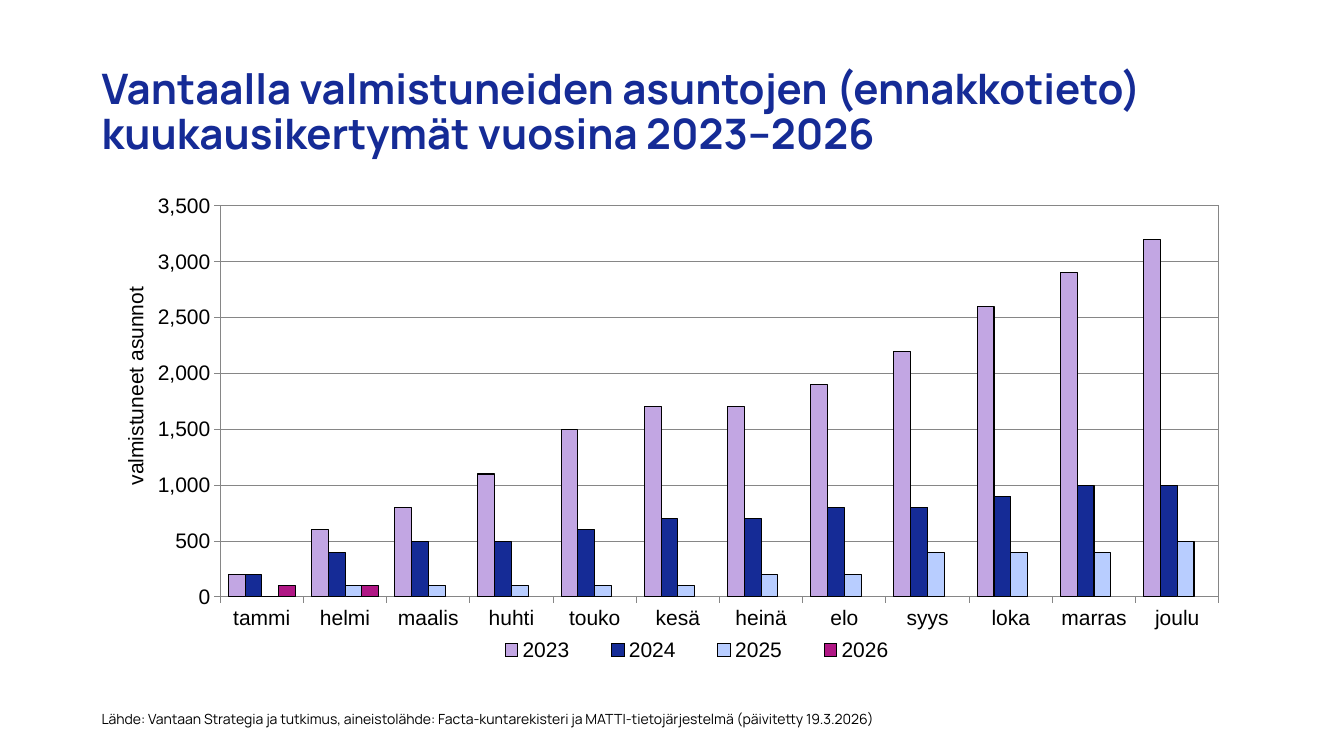
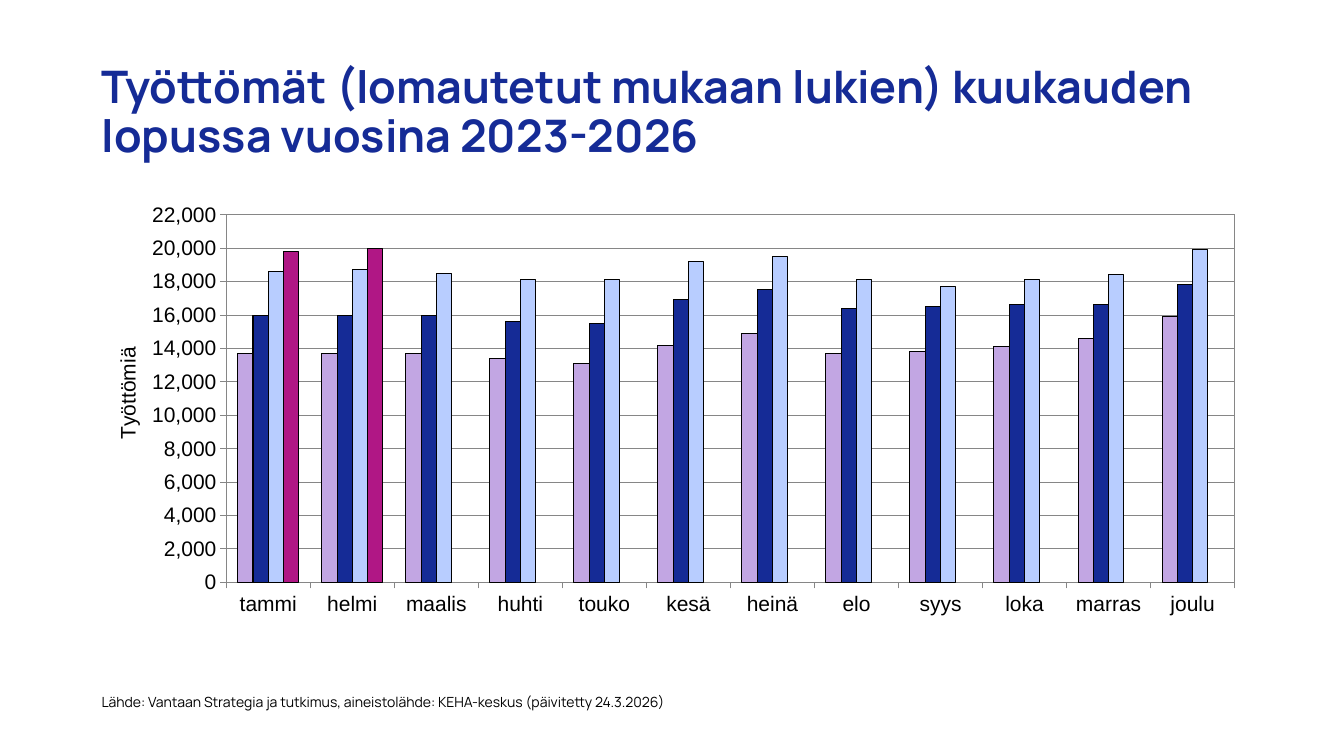
from pptx import Presentation
from pptx.chart.data import CategoryChartData
from pptx.dml.color import RGBColor
from pptx.enum.chart import XL_CHART_TYPE, XL_LEGEND_POSITION, XL_TICK_MARK
from pptx.enum.text import MSO_ANCHOR, MSO_AUTO_SIZE, PP_ALIGN
from pptx.oxml import parse_xml
from pptx.oxml.ns import nsdecls, qn
from pptx.util import Cm, Pt

NAVY = RGBColor(0x15, 0x2B, 0x96)
LILAC = RGBColor(0xC2, 0xA6, 0xE3)
SKY = RGBColor(0xB8, 0xCD, 0xFF)
MAGENTA = RGBColor(0xB0, 0x17, 0x85)
BLACK = RGBColor(0, 0, 0)
GREY = RGBColor(0x86, 0x86, 0x86)

YEAR_COLOURS = {"2023": LILAC, "2024": NAVY, "2025": SKY, "2026": MAGENTA}
MONTHS = ["tammi", "helmi", "maalis", "huhti", "touko", "kesä",
          "heinä", "elo", "syys", "loka", "marras", "joulu"]

# Monthly figures in hundreds, one list per year
COMPLETED_HOMES = [
    [2, 6, 8, 11, 15, 17, 17, 19, 22, 26, 29, 32],
    [2, 4, 5, 5, 6, 7, 7, 8, 8, 9, 10, 10],
    [0, 1, 1, 1, 1, 1, 2, 2, 4, 4, 4, 5],
    [1, 1],
]
UNEMPLOYED = [
    [137, 137, 137, 134, 131, 142, 149, 137, 138, 141, 146, 159],
    [160, 160, 160, 156, 155, 169, 175, 164, 165, 166, 166, 178],
    [186, 187, 185, 181, 181, 192, 195, 181, 177, 181, 184, 199],
    [198, 200],
]


def set_layout(parent, x, y, w=None, h=None, inner=False):
    """Place a chart part by fractions of the chart's size."""
    for old in parent.findall(qn("c:layout")):
        parent.remove(old)
    target = '<c:layoutTarget val="inner"/>' if inner else ""
    modes = '<c:xMode val="edge"/><c:yMode val="edge"/>'
    sizes = "".join(f'<c:{key} val="{value}"/>'
                    for key, value in zip("xywh", (x, y, w, h)) if value is not None)
    layout = parse_xml(f'<c:layout {nsdecls("c")}><c:manualLayout>'
                       f'{target}{modes}{sizes}</c:manualLayout></c:layout>')
    leading = [child for child in parent if child.tag in (qn("c:tx"), qn("c:legendPos"))]
    parent.insert(len(leading), layout)


class Deck:
    TEXT_FONT = "Manrope"
    CHART_FONT = "Arial"
    LEFT = Cm(2.31)

    def __init__(self):
        self.presentation = Presentation()
        self.presentation.slide_width = Cm(33.87)
        self.presentation.slide_height = Cm(19.05)
        self.slide = None

    def new_slide(self, heading, size):
        layout = self.presentation.slide_layouts.get_by_name("Title Only")
        self.slide = self.presentation.slides.add_slide(layout)
        title = self.slide.shapes.title
        title.left, title.top = self.LEFT, Cm(1.02)
        title.width, title.height = Cm(29.21), Cm(3.68)
        self.fill_text(title.text_frame, heading, size, NAVY, bold=True)
        title.text_frame.vertical_anchor = MSO_ANCHOR.MIDDLE
        title.text_frame.paragraphs[0].line_spacing = 0.9

    def fill_text(self, frame, text, size, colour, bold=False):
        frame.word_wrap = True
        frame.auto_size = MSO_AUTO_SIZE.NONE
        frame.text = text
        paragraph = frame.paragraphs[0]
        paragraph.alignment = PP_ALIGN.LEFT
        font = paragraph.font
        font.name, font.size, font.bold = self.TEXT_FONT, Pt(size), bold
        font.color.rgb = colour

    def source(self, text, top, width, height):
        box = self.slide.shapes.add_textbox(self.LEFT, top, width, height)
        self.fill_text(box.text_frame, text, 10, BLACK)

    def column_chart(self, hundreds, box, plot, gap, top_value, step, caption, caption_at):
        data = CategoryChartData(number_format="General")
        data.categories = MONTHS
        for year, figures in zip(YEAR_COLOURS, hundreds):
            missing = [None] * (len(MONTHS) - len(figures))
            data.add_series(year, [figure * 100 for figure in figures] + missing)
        chart = self.slide.shapes.add_chart(
            XL_CHART_TYPE.COLUMN_CLUSTERED, *box, data).chart
        chart.has_title = False
        chart.has_legend = False
        chart.font.name, chart.font.size = self.CHART_FONT, Pt(15)
        chart.font.color.rgb = BLACK

        # Columns
        columns = chart.plots[0]
        columns.gap_width, columns.overlap = gap, 0
        columns.vary_by_categories = False
        for series, colour in zip(columns.series, YEAR_COLOURS.values()):
            series.invert_if_negative = False
            series.format.fill.solid()
            series.format.fill.fore_color.rgb = colour
            self.outline(series.format.line, BLACK)

        # Axes and gridlines
        values = chart.value_axis
        values.minimum_scale, values.maximum_scale = 0, top_value
        values.major_unit = step
        values.has_major_gridlines = True
        values.tick_labels.number_format = "#,##0"
        values.tick_labels.number_format_is_linked = False
        self.outline(values.major_gridlines.format.line, GREY)
        for axis in (values, chart.category_axis):
            axis.major_tick_mark = XL_TICK_MARK.OUTSIDE
            self.outline(axis.format.line, GREY)

        # Axis caption
        frame = values.axis_title.text_frame
        frame.text = caption
        font = frame.paragraphs[0].font
        font.name, font.size, font.bold = self.CHART_FONT, Pt(15), False
        font.color.rgb = BLACK
        set_layout(values.axis_title.element, *caption_at)

        # Plot area position and border
        area = chart.element.xpath("c:chart/c:plotArea")[0]
        set_layout(area, *plot, inner=True)
        area.append(parse_xml(
            f'<c:spPr {nsdecls("c", "a")}><a:noFill/><a:ln w="{Pt(0.75)}"><a:solidFill>'
            f'<a:srgbClr val="{GREY}"/></a:solidFill></a:ln></c:spPr>'))
        return chart

    def legend(self, chart, *place):
        chart.has_legend = True
        chart.legend.position = XL_LEGEND_POSITION.BOTTOM
        chart.legend.include_in_layout = False
        set_layout(chart.element.xpath("c:chart/c:legend")[0], *place)

    @staticmethod
    def outline(line, colour):
        line.color.rgb = colour
        line.width = Pt(0.75)


def main():
    deck = Deck()

    # Completed homes
    deck.new_slide("Vantaalla valmistuneiden asuntojen (ennakkotieto) "
                   "kuukausikertymät vuosina 2023–2026", 30)
    deck.source("Lähde: Vantaan Strategia ja tutkimus, aineistolähde: Facta-kuntarekisteri "
                "ja MATTI-tietojärjestelmä (päivitetty 19.3.2026)",
                Cm(17.78), Cm(22.5), Cm(1.24))
    homes = deck.column_chart(
        COMPLETED_HOMES, box=(Cm(2.69), Cm(4.7), Cm(28.6), Cm(12.17)),
        plot=(0.1, 0.04, 0.88, 0.81), gap=96, top_value=3500, step=500,
        caption="valmistuneet asunnot", caption_at=(0.01, 0.2))
    deck.legend(homes, 0.32, 0.92, 0.4, 0.08)

    # Unemployment
    deck.new_slide("Työttömät (lomautetut mukaan lukien) kuukauden "
                   "lopussa vuosina 2023-2026", 32)
    deck.source("Lähde: Vantaan Strategia ja tutkimus, aineistolähde: KEHA-keskus "
                "(päivitetty 24.3.2026)", Cm(17.35), Cm(16.46), Cm(1.02))
    deck.column_chart(
        UNEMPLOYED, box=(Cm(2.49), Cm(4.95), Cm(29.21), Cm(11.58)),
        plot=(0.11, 0.04, 0.87, 0.8), gap=150, top_value=22000, step=2000,
        caption="Työttömiä", caption_at=(0.01, 0.32))

    deck.presentation.save("out.pptx")


if __name__ == "__main__":
    main()
